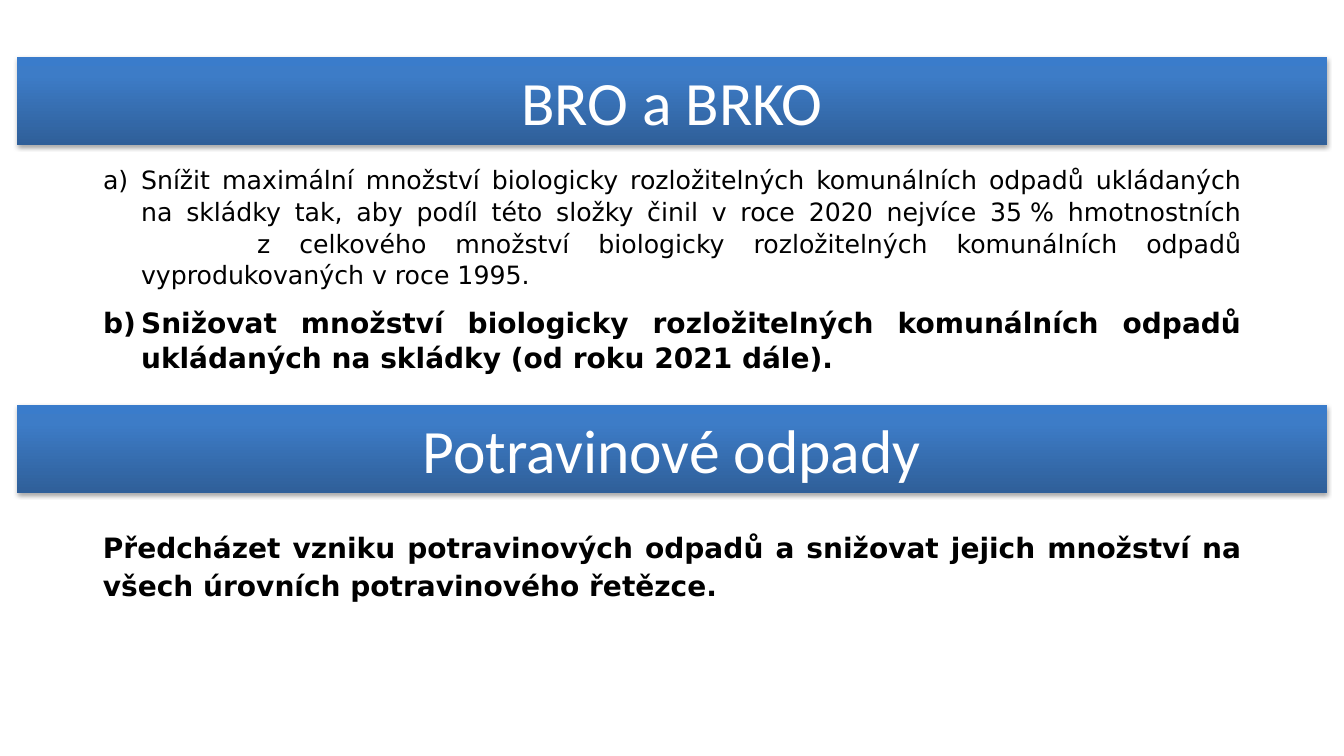
import copy

import pptx
import pptx.dml.color
import pptx.enum.shapes
import pptx.enum.text
import pptx.oxml
import pptx.oxml.ns
import pptx.util

PX = 914400 / 100.8
NS = pptx.oxml.ns.nsdecls("a")
ALIGN = pptx.enum.text.PP_ALIGN
FONT = "DejaVu Sans"
STOPS = [(0, "2F5F99"), (0.8, "3D7CC7"), (1, "3A7CCB")]


def px(*lengths):
    return [pptx.util.Emu(round(n * PX)) for n in lengths]


def style(p, size, font, color, bold=False):
    for r in p.runs:
        r.font.size = pptx.util.Pt(size)
        r.font.name = font
        r.font.bold = bold
        r.font.color.rgb = pptx.dml.color.RGBColor.from_string(color)


prs = pptx.Presentation()
prs.slide_width, prs.slide_height = px(1344, 756)
s = prs.slides.add_slide(prs.slide_layouts[1])

# Goals for biodegradable waste
body = s.placeholders[1]
body.left, body.top, body.width, body.height = px(93, 158, 1159, 247)
tf = body.text_frame
tf.auto_size = pptx.enum.text.MSO_AUTO_SIZE.NONE
goals = [
    ("Snížit maximální množství biologicky rozložitelných komunálních odpadů "
     "ukládaných na skládky tak, aby podíl této složky činil v roce 2020 "
     "nejvíce 35\u00a0% hmotnostních\v\tz celkového množství biologicky "
     "rozložitelných komunálních odpadů vyprodukovaných v roce 1995.", 18, False),
    ("Snižovat množství biologicky rozložitelných komunálních odpadů "
     "ukládaných na skládky (od roku 2021 dále).", 20, True),
]
indent, tab = px(38, 154)
for i, (text, size, bold) in enumerate(goals):
    p = tf.paragraphs[0] if i == 0 else tf.add_paragraph()
    p.text = text
    p.alignment = ALIGN.JUSTIFY
    p.line_spacing = 1.05
    p.space_after = pptx.util.Pt(6)
    style(p, size, FONT, "000000", bold)
    pPr = p._p.get_or_add_pPr()
    pPr.set("marL", str(indent))
    pPr.set("indent", str(-indent))
    for xml in (f'<a:buFont {NS} typeface="{FONT}"/>',
                f'<a:buAutoNum {NS} type="alphaLcParenR"/>',
                f'<a:tabLst {NS}><a:tab pos="{tab}" algn="l"/></a:tabLst>'):
        pPr.append(pptx.oxml.parse_xml(xml))

# Goal for food waste
tf = s.shapes.add_textbox(*px(93, 520, 1159, 146)).text_frame
tf.word_wrap = True
p = tf.paragraphs[0]
p.text = ("Předcházet vzniku potravinových odpadů a snižovat jejich množství "
          "na všech úrovních potravinového řetězce.")
p.alignment = ALIGN.JUSTIFY
p.line_spacing = 1.15
p.space_before = pptx.util.Pt(10)
p.space_after = pptx.util.Pt(6)
style(p, 20, FONT, "000000", True)

# Heading bars
food_bar = s.shapes.add_shape(pptx.enum.shapes.MSO_SHAPE.RECTANGLE, *px(17, 405, 1310, 88))
for bar, top, text in [(s.shapes.title, 57, "BRO a BRKO"),
                       (food_bar, 405, "Potravinové odpady")]:
    bar.left, bar.top, bar.width, bar.height = px(17, top, 1310, 88)
    bar.fill.gradient()
    bar.fill.gradient_angle = 90
    gsLst = bar.fill.gradient_stops[0]._gs.getparent()
    gsLst.append(copy.deepcopy(gsLst[-1]))
    for stop, (position, color) in zip(bar.fill.gradient_stops, STOPS):
        stop.position = position
        stop.color.rgb = pptx.dml.color.RGBColor.from_string(color)
    bar.line.fill.background()
    spPr = bar._element.spPr
    spPr.append(pptx.oxml.parse_xml(
        f'<a:effectLst {NS}><a:outerShdw blurRad="40000" dist="23000" dir="5400000" '
        'rotWithShape="0"><a:srgbClr val="000000"><a:alpha val="35000"/></a:srgbClr>'
        '</a:outerShdw></a:effectLst>'))
    tf = bar.text_frame
    tf.auto_size = pptx.enum.text.MSO_AUTO_SIZE.NONE
    tf.vertical_anchor = pptx.enum.text.MSO_ANCHOR.MIDDLE
    p = tf.paragraphs[0]
    p.text = text
    p.alignment = ALIGN.CENTER
    style(p, 44, "Calibri", "FFFFFF")

prs.save("out.pptx")
